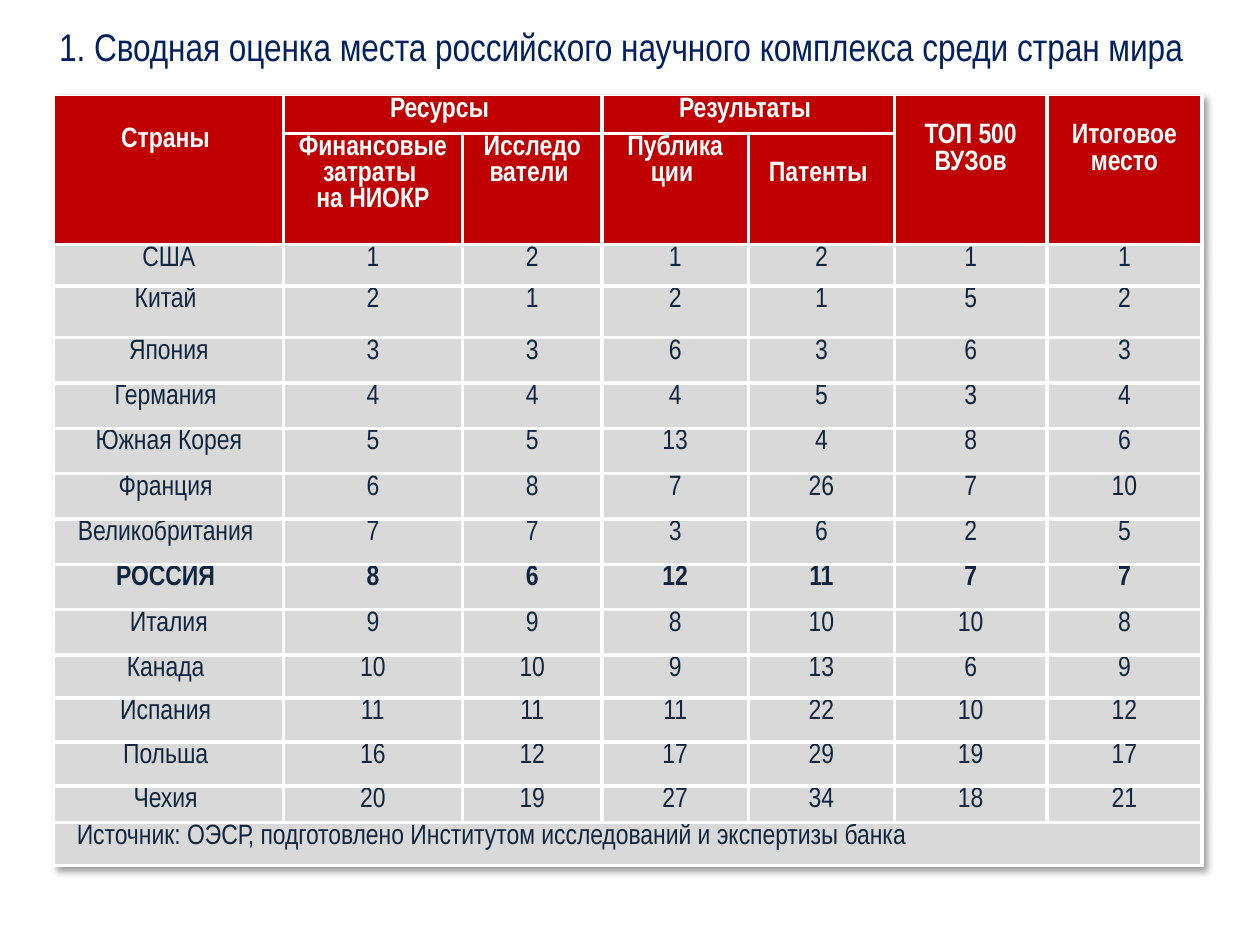
import pptx
import pptx.util
import pptx.dml.color
import pptx.enum.text
import pptx.oxml
import pptx.oxml.ns

Inches = pptx.util.Inches
Pt = pptx.util.Pt
ALIGN = pptx.enum.text.PP_ALIGN
COLORS = {"title": "002060", "head": "C00000", "body": "D9D9D9",
          "ink": "0F243E", "white": "FFFFFF"}
NS = pptx.oxml.ns.nsdecls("a")


def style(para, size, color, bold=False):
    font = para.font
    font.name = "Arial Narrow"
    font.size = Pt(size)
    font.bold = bold
    font.color.rgb = pptx.dml.color.RGBColor.from_string(COLORS[color])


def edge(cell, side, width):
    cell._tc.get_or_add_tcPr().append(pptx.oxml.parse_xml(
        f'<a:ln{side} {NS} w="{Pt(width)}"><a:solidFill>'
        f'<a:srgbClr val="{COLORS["white"]}"/></a:solidFill></a:ln{side}>'))


deck = pptx.Presentation()
deck.slide_width = Inches(10)
deck.slide_height = Inches(7.5)
slide = deck.slides.add_slide(deck.slide_layouts[6])

# Title
box = slide.shapes.add_textbox(Inches(-0.12), Inches(0.13), Inches(10.12), Inches(0.47))
frame = box.text_frame
frame.word_wrap = True
frame.auto_size = pptx.enum.text.MSO_AUTO_SIZE.SHAPE_TO_FIT_TEXT
frame.vertical_anchor = pptx.enum.text.MSO_ANCHOR.MIDDLE
frame.text = "1. Сводная оценка места российского научного комплекса среди стран мира"
title = frame.paragraphs[0]
title._p.get_or_add_pPr().set("indent", str(Inches(0.49)))
style(title, 22, "title")

# Table contents: two header rows, countries, source
rows = [
    ["Страны ", "Ресурсы ", "", "Результаты ", "", "ТОП 500 ВУЗов", "Итоговое место"],
    ["", "Финансовые затраты \nна НИОКР", "Исследо\nватели ", "Публика\nции ",
     "Патенты ", "", ""],
    ["США", 1, 2, 1, 2, 1, 1],
    ["Китай ", 2, 1, 2, 1, 5, 2],
    ["Япония", 3, 3, 6, 3, 6, 3],
    ["Германия ", 4, 4, 4, 5, 3, 4],
    ["Южная Корея", 5, 5, 13, 4, 8, 6],
    ["Франция ", 6, 8, 7, 26, 7, 10],
    ["Великобритания ", 7, 7, 3, 6, 2, 5],
    ["РОССИЯ ", 8, 6, 12, 11, 7, 7],
    ["Италия", 9, 9, 8, 10, 10, 8],
    ["Канада ", 10, 10, 9, 13, 6, 9],
    ["Испания ", 11, 11, 11, 22, 10, 12],
    ["Польша ", 16, 12, 17, 29, 19, 17],
    ["Чехия ", 20, 19, 27, 34, 18, 21],
    ["Источник: OЭСР, подготовлено Институтом исследований и экспертизы банка"] + [""] * 6,
]
widths = [1.82, 1.42, 1.11, 1.16, 1.16, 1.21, 1.23]
heights = [0.3, 0.88, 0.33, 0.41] + [0.36] * 7 + [0.34, 0.35, 0.35, 0.29, 0.34]
lowered = {(0, 0): 0.24, (0, 5): 0.21, (0, 6): 0.21, (1, 4): 0.21}
last = len(rows) - 1

grid = slide.shapes.add_table(len(rows), len(widths), Inches(0.43), Inches(0.76),
                              Inches(sum(widths)), Inches(sum(heights)))
table = grid.table
table.first_row = False
table.horz_banding = False
for col, width in zip(table.columns, widths):
    col.width = Inches(width)
for row, height in zip(table.rows, heights):
    row.height = Inches(height)

# Cells
for r, row in enumerate(rows):
    head = r < 2
    for c, value in enumerate(row):
        cell = table.cell(r, c)
        cell.margin_left = cell.margin_right = Inches(0.07)
        cell.margin_top = Inches(0.01 + lowered.get((r, c), 0))
        cell.margin_bottom = 0
        edge(cell, "L", 1 if c == 0 else 2.25)
        edge(cell, "R", 2.25)
        edge(cell, "T", 1 if r == 0 else 2.25)
        edge(cell, "B", 2.25)
        cell.fill.solid()
        cell.fill.fore_color.rgb = pptx.dml.color.RGBColor.from_string(
            COLORS["head" if head else "body"])
        cell.text = str(value)
        for para in cell.text_frame.paragraphs:
            para.alignment = ALIGN.LEFT if r == last else ALIGN.CENTER
            style(para, 16, "white" if head else "ink", head or row[0] == "РОССИЯ ")

# Merged cells
for top, left, bottom, right in [(0, 0, 1, 0), (0, 1, 0, 2), (0, 3, 0, 4),
                                 (0, 5, 1, 5), (0, 6, 1, 6), (last, 0, last, 6)]:
    table.cell(top, left).merge(table.cell(bottom, right))
table.cell(last, 0).margin_left = Inches(0.18)

# Table shadow
table._tbl.tblPr.insert(0, pptx.oxml.parse_xml(
    f'<a:effectLst {NS}><a:outerShdw blurRad="{Pt(4)}" dist="{Pt(3)}" dir="2700000" '
    'algn="tl" rotWithShape="0"><a:srgbClr val="000000"><a:alpha val="40000"/>'
    '</a:srgbClr></a:outerShdw></a:effectLst>'))

deck.save("out.pptx")
